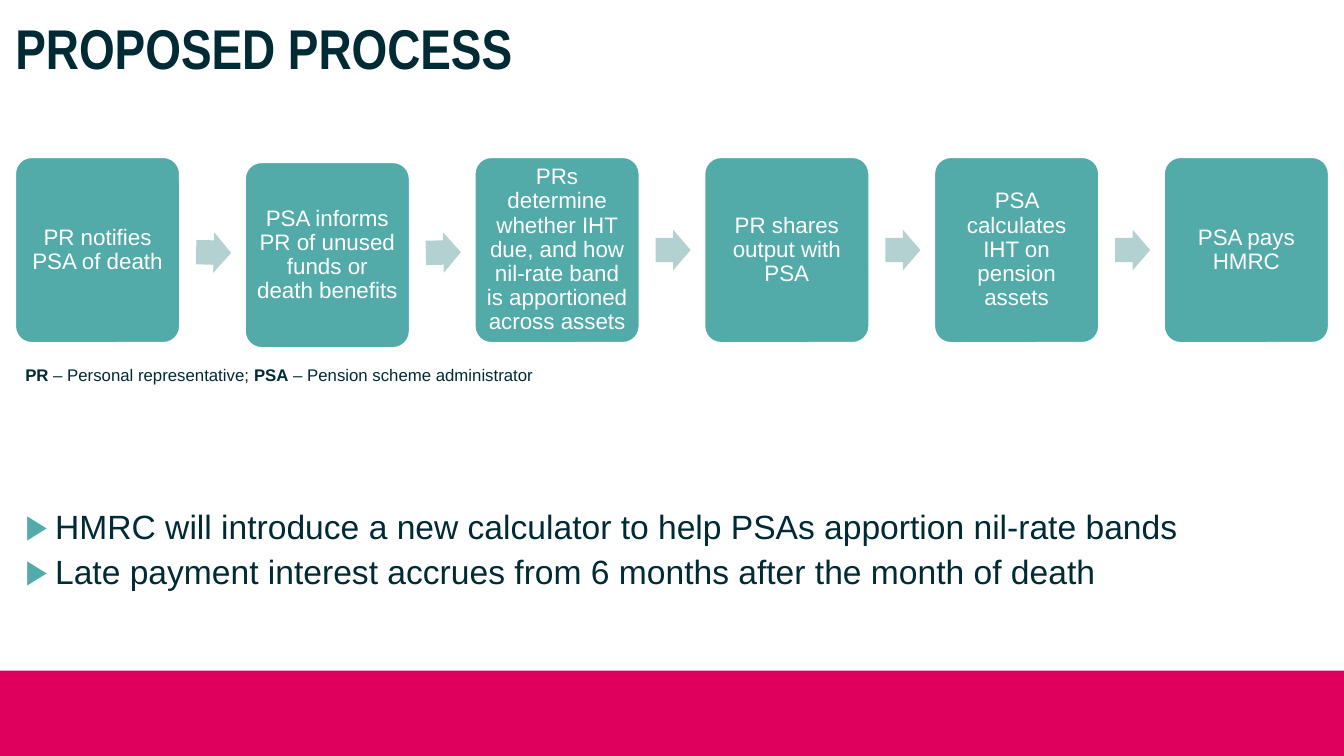
from math import atan2, degrees

from lxml.etree import SubElement
from pptx import Presentation
from pptx.dml.color import RGBColor
from pptx.enum.shapes import MSO_SHAPE
from pptx.enum.text import MSO_ANCHOR, PP_ALIGN
from pptx.oxml.ns import qn
from pptx.util import Pt

INK, TEAL, PALE, PINK, WHITE = "002A34", "52AAA9", "B3D1D1", "DD005D", "FFFFFF"
TITLE = {"name": "Arial Narrow", "size": Pt(40), "bold": True}
STEP = {"name": "Arial", "size": Pt(16)}
NOTE = {"name": "Arial", "size": Pt(12)}
POINT = {"name": "Arial", "size": Pt(24)}

STEPS = [
    "PR notifies PSA of death",
    "PSA informs PR of unused funds or death benefits",
    "PRs determine whether IHT due, and how nil-rate band is apportioned across assets",
    "PR shares output with PSA",
    "PSA calculates IHT on pension assets",
    "PSA pays HMRC",
]
DROPS = [0, 3.6, 0, 0, 0, 0]
KEY = [("PR", True), (" – Personal representative; ", False),
       ("PSA", True), (" – Pension scheme administrator", False)]
POINTS = [
    "HMRC will introduce a new calculator to help PSAs apportion nil-rate bands",
    "Late payment interest accrues from 6 months after the month of death",
]


def color(code):
    return RGBColor.from_string(code)


def style(item, form):
    for name, value in form.items():
        setattr(item, name, value)


def add_run(para, text, form, code=INK):
    run = para.add_run()
    run.text = text
    style(run.font, form)
    run.font.color.rgb = color(code)


def add_form(slide, kind, box, fill, line=None):
    form = slide.shapes.add_shape(kind, *map(Pt, box))
    form.shadow.inherit = False
    form.fill.solid()
    form.fill.fore_color.rgb = color(fill)
    if line:
        form.line.color.rgb = color(line)
        form.line.width = Pt(1)
    else:
        form.line.fill.background()
    return form


def set_frame(frame, side, edge, anchor=MSO_ANCHOR.TOP):
    style(frame, {"word_wrap": True, "vertical_anchor": anchor,
                  "margin_left": Pt(side), "margin_right": Pt(side),
                  "margin_top": Pt(edge), "margin_bottom": Pt(edge)})


def add_text(slide, box, side=7.2):
    frame = slide.shapes.add_textbox(*map(Pt, box)).text_frame
    set_frame(frame, side, 3.6)
    return frame


def add_title(slide, box):
    para = add_text(slide, box, 0).paragraphs[0]
    para.line_spacing = 0.9
    add_run(para, "PROPOSED PROCESS", TITLE)


def add_card(slide, box, text):
    card = add_form(slide, MSO_SHAPE.ROUNDED_RECTANGLE, box, TEAL, WHITE)
    card.adjustments[0] = 0.1
    set_frame(card.text_frame, 5, 5, MSO_ANCHOR.MIDDLE)
    para = card.text_frame.paragraphs[0]
    style(para, {"alignment": PP_ALIGN.CENTER, "line_spacing": 0.9})
    add_run(para, text, STEP, WHITE)


def add_flow(slide, box):
    left, top, width, height = box
    wide = 117.4
    pitch = (width - wide) / (len(STEPS) - 1)
    for i, (text, drop) in enumerate(zip(STEPS, DROPS)):
        x = left + i * pitch
        add_card(slide, (x, top + drop, wide, height), text)
        if i + 1 == len(STEPS):
            break
        # Each arrow sits between two cards and tilts along their centres
        rise = DROPS[i + 1] - drop
        mid = top + drop + (height + rise) / 2
        arrow = add_form(slide, MSO_SHAPE.RIGHT_ARROW,
                         (x + wide + 11.7, mid - 14.5, 25, 29), PALE)
        arrow.adjustments[0] = 0.6
        arrow.rotation = degrees(atan2(rise, pitch))


def add_key(slide, box):
    para = add_text(slide, box).paragraphs[0]
    para.line_spacing = 0.9
    for text, bold in KEY:
        add_run(para, text, {**NOTE, "bold": bold})


def add_mark(para):
    props = para._p.get_or_add_pPr()
    props.set("marL", str(Pt(21.3)))
    props.set("indent", str(Pt(-21.3)))
    tint = SubElement(props, qn("a:buClr"))
    SubElement(tint, qn("a:srgbClr")).set("val", TEAL)
    SubElement(props, qn("a:buFont")).set("typeface", "Arial")
    SubElement(props, qn("a:buChar")).set("char", "▶")


def add_points(slide, box):
    frame = add_text(slide, box)
    for i, text in enumerate(POINTS):
        para = frame.add_paragraph() if i else frame.paragraphs[0]
        style(para, {"line_spacing": 0.9, "space_after": Pt(6)})
        add_mark(para)
        add_run(para, text, POINT)


def main():
    deck = Presentation()
    style(deck, {"slide_width": Pt(960), "slide_height": Pt(540)})
    slide = deck.slides.add_slide(deck.slide_layouts[6])
    # Footer band
    add_form(slide, MSO_SHAPE.RECTANGLE, (0, 479, 960, 61), PINK)
    # Heading
    add_title(slide, (11, 11.5, 938, 51))
    # Process steps and abbreviations
    add_flow(slide, (11, 112.4, 938, 132.4))
    add_key(slide, (11, 258.5, 407, 40))
    # Key points
    add_points(slide, (11, 361.3, 843, 99))
    deck.save("out.pptx")


if __name__ == "__main__":
    main()
